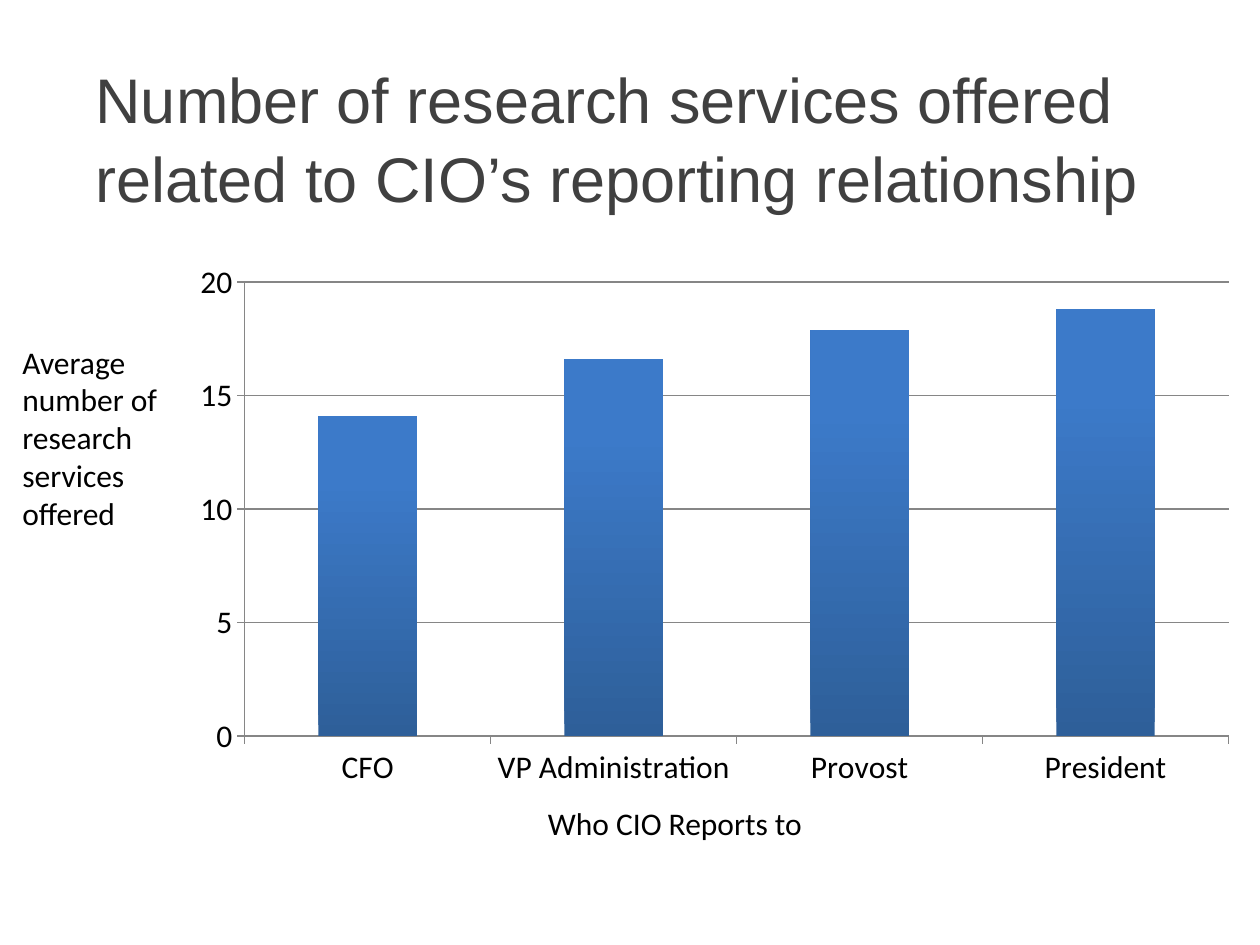
from pptx import Presentation
from pptx.chart.data import CategoryChartData
from pptx.dml.color import RGBColor
from pptx.enum import chart as charts, text
from pptx.util import Inches, Pt

# Content
TITLE = "Number of research services offered related to CIO’s reporting relationship"
X_LABEL = "Who CIO Reports to"
Y_LABEL = "Average number of research services offered"
SERVICES = {"CFO": 14.1, "VP Administration": 16.6, "Provost": 17.9, "President": 18.8}
COLORS = {"title": "404040", "text": "000000", "axis": "868686",
          "bar_bottom": "2E5F99", "bar_top": "3C7AC9"}


def color(name):
    return RGBColor.from_string(COLORS[name])


def add_label(page, area, words, size, font, tone, spacing=1.0, top_inset=0.05):
    box = page.shapes.add_textbox(*(Inches(n) for n in area))
    frame = box.text_frame
    frame.word_wrap = True
    frame.vertical_anchor = text.MSO_ANCHOR.TOP
    frame.margin_top = Inches(top_inset)
    para = frame.paragraphs[0]
    para.line_spacing = spacing
    span = para.add_run()
    span.text = words
    span.font.size = Pt(size)
    span.font.name = font
    span.font.color.rgb = color(tone)


def style_line(line):
    line.color.rgb = color("axis")
    line.width = Pt(0.75)


deck = Presentation()
deck.slide_width, deck.slide_height = Inches(10), Inches(7.5)
page = deck.slides.add_slide(deck.slide_layouts[6])

# Title
add_label(page, (0.66, 0.37, 8.77, 0.8), TITLE, 36, "Arial", "title", 1.05, 0.08)

# Column chart
data = CategoryChartData()
data.categories = list(SERVICES)
data.add_series("Series 1", list(SERVICES.values()))
chart = page.shapes.add_chart(
    charts.XL_CHART_TYPE.COLUMN_CLUSTERED,
    Inches(1.42), Inches(2), Inches(8.5), Inches(4.33), data).chart
chart.has_legend = False
chart.has_title = False
chart.font.size = Pt(18)
chart.font.name = "Calibri"
chart.font.color.rgb = color("text")

# Axes
for axis in (chart.category_axis, chart.value_axis):
    axis.major_tick_mark = charts.XL_TICK_MARK.OUTSIDE
    axis.minor_tick_mark = charts.XL_TICK_MARK.NONE
    style_line(axis.format.line)
values = chart.value_axis
values.minimum_scale, values.maximum_scale, values.major_unit = 0, 20, 5
values.has_major_gridlines = True
style_line(values.major_gridlines.format.line)

# Bars, shaded from bottom to top
plot = chart.plots[0]
plot.vary_by_categories = False
plot.gap_width = 150
fill = plot.series[0].format.fill
fill.gradient()
fill.gradient_angle = 90
for stop, (tone, position) in zip(fill.gradient_stops,
                                  (("bar_bottom", 0), ("bar_top", 0.8))):
    stop.color.rgb = color(tone)
    stop.position = position

# Axis captions
add_label(page, (4.25, 6.33, 2.25, 0.42), X_LABEL, 18, "Calibri", "text")
add_label(page, (0.08, 2.67, 1.33, 1.62), Y_LABEL, 18, "Calibri", "text")

deck.save("out.pptx")
